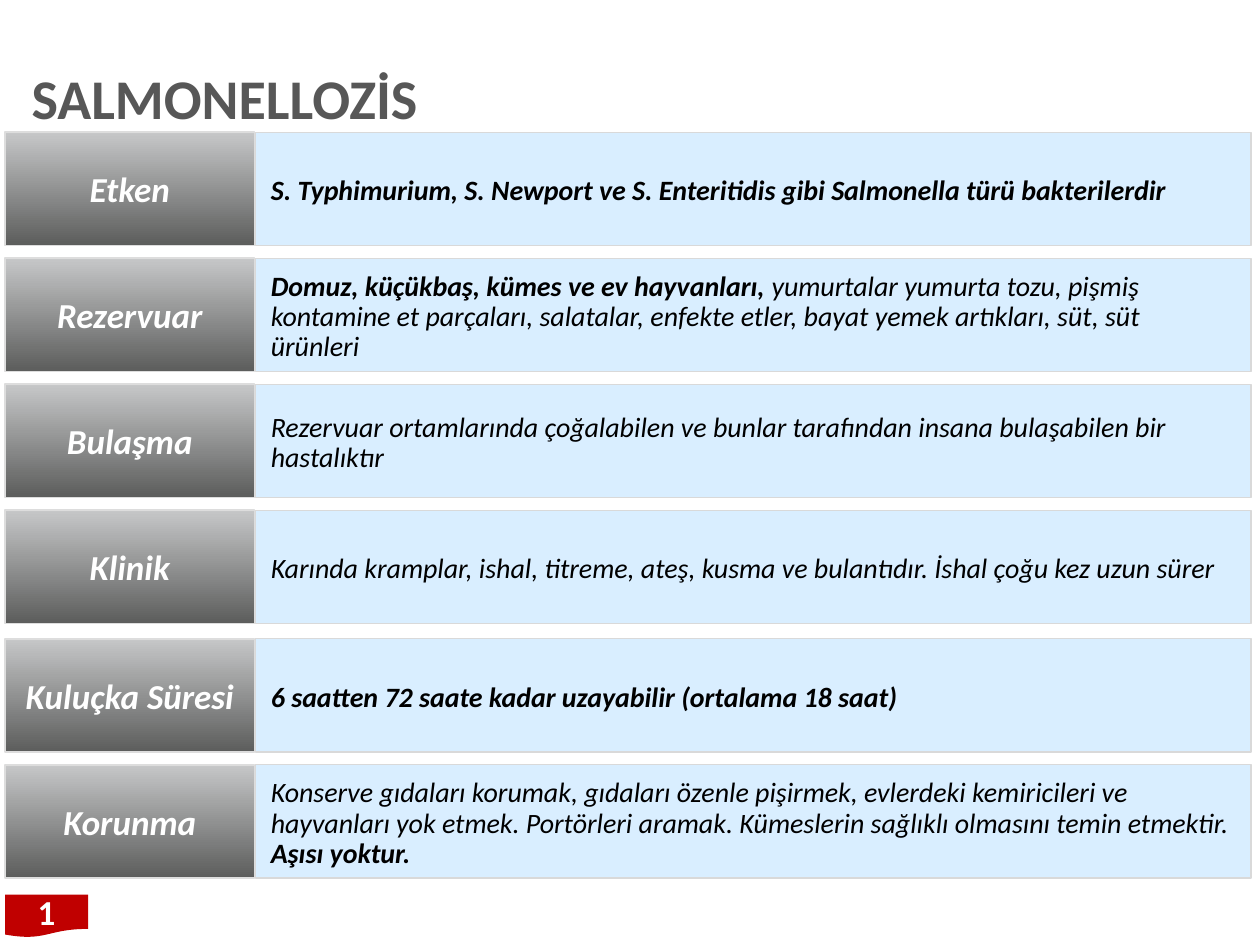
from dataclasses import dataclass

from lxml import etree
from pptx import Presentation
from pptx import util as u
from pptx.dml.color import RGBColor
from pptx.enum import shapes, text
from pptx.oxml.ns import qn


@dataclass(frozen=True)
class Theme:
    font: str = "Calibri"
    grey: str = "575757"
    white: str = "FFFFFF"
    black: str = "000000"
    red: str = "C00000"
    label_top: str = "C6C7C8"
    label_bottom: str = "5C5D5C"
    label_line: str = "DDDDDD"
    value_fill: str = "BDE1FF"
    value_line: str = "D9D9D9"
    title_size: float = 32
    label_size: float = 20
    value_size: float = 16


@dataclass(frozen=True)
class Run:
    text: str
    bold: bool = False


@dataclass(frozen=True)
class Row:
    label: str
    top: float
    runs: tuple[Run, ...]


@dataclass(frozen=True)
class Box:
    left: float
    top: float
    width: float
    height: float

    def points(self) -> tuple:
        return tuple(u.Pt(v) for v in (self.left, self.top, self.width, self.height))


THEME = Theme()
LABEL_LEFT, LABEL_WIDTH = 2.88, 142.56
VALUE_LEFT, VALUE_WIDTH = 146.16, 568.8
ROW_TOP, ROW_STEP, ROW_HEIGHT = 75.6, 72, 64.8
LOWER_TOP = ROW_TOP + 4 * ROW_STEP + 1.44

ROWS = (
    Row("Etken", ROW_TOP, (
        Run("S. Typhimurium, S. Newport ve S. Enteritidis gibi Salmonella türü "
            "bakterilerdir", True),)),
    Row("Rezervuar", ROW_TOP + ROW_STEP, (
        Run("Domuz, küçükbaş, kümes ve ev hayvanları, ", True),
        Run("yumurtalar yumurta tozu, pişmiş kontamine et parçaları, salatalar, "
            "enfekte etler, bayat yemek artıkları, süt, süt ürünleri"))),
    Row("Bulaşma", ROW_TOP + 2 * ROW_STEP, (
        Run("Rezervuar ortamlarında çoğalabilen ve bunlar tarafından insana "
            "bulaşabilen bir hastalıktır"),)),
    Row("Klinik", ROW_TOP + 3 * ROW_STEP, (
        Run("Karında kramplar, ishal, titreme, ateş, kusma ve bulantıdır. "
            "İshal çoğu kez uzun sürer"),)),
    Row("Kuluçka Süresi", LOWER_TOP, (
        Run("6 saatten 72 saate kadar uzayabilir (ortalama 18 saat)", True),)),
    Row("Korunma", LOWER_TOP + ROW_STEP, (
        Run("Konserve gıdaları korumak, gıdaları özenle pişirmek, evlerdeki "
            "kemiricileri ve hayvanları yok etmek. Portörleri aramak. Kümeslerin "
            "sağlıklı olmasını temin etmektir. "),
        Run("Aşısı yoktur.", True))),
)


def rgb(color: str) -> RGBColor:
    return RGBColor.from_string(color)


def set_frame(tf, insets: tuple[float, ...]) -> None:
    """Insets are left, top, right and bottom, in points."""
    sides = ("margin_left", "margin_top", "margin_right", "margin_bottom")
    values = dict(zip(sides, map(u.Pt, insets)))
    values |= {"word_wrap": True, "auto_size": text.MSO_AUTO_SIZE.NONE,
               "vertical_anchor": text.MSO_ANCHOR.MIDDLE}
    for name, value in values.items():
        setattr(tf, name, value)


def add_run(p, words: str, size: float, color: str,
            bold: bool = True, italic: bool = False) -> None:
    r = p.add_run()
    r.text = words
    values = {"name": THEME.font, "size": u.Pt(size), "bold": bold, "italic": italic}
    for name, value in values.items():
        setattr(r.font, name, value)
    r.font.color.rgb = rgb(color)


def add_panel(s, kind, box: Box):
    sp = s.shapes.add_shape(kind, *box.points())
    sp.shadow.inherit = False
    return sp


def set_line(sp, color: str, width: float) -> None:
    sp.line.color.rgb = rgb(color)
    sp.line.width = u.Pt(width)


def add_label(s, row: Row) -> None:
    sp = add_panel(s, shapes.MSO_SHAPE.RECTANGLE,
                   Box(LABEL_LEFT, row.top, LABEL_WIDTH, ROW_HEIGHT))
    sp.fill.gradient()
    sp.fill.gradient_angle = 270
    for stop, color in zip(sp.fill.gradient_stops, (THEME.label_top, THEME.label_bottom)):
        stop.color.rgb = rgb(color)
    set_line(sp, THEME.label_line, 1)
    set_frame(sp.text_frame, (0, 0, 0, 0))
    p = sp.text_frame.paragraphs[0]
    p.alignment = text.PP_ALIGN.CENTER
    add_run(p, row.label, THEME.label_size, THEME.white, italic=True)


def add_value(s, row: Row) -> None:
    sp = add_panel(s, shapes.MSO_SHAPE.RECTANGLE,
                   Box(VALUE_LEFT, row.top, VALUE_WIDTH, ROW_HEIGHT))
    sp.fill.solid()
    sp.fill.fore_color.rgb = rgb(THEME.value_fill)
    color = sp.element.spPr.find(qn("a:solidFill"))[0]
    etree.SubElement(color, qn("a:alpha")).set("val", "56000")
    set_line(sp, THEME.value_line, 0.75)
    set_frame(sp.text_frame, (8.64, 8.64, 11.52, 5.76))
    p = sp.text_frame.paragraphs[0]
    p.alignment = text.PP_ALIGN.LEFT
    p.line_spacing = 0.9
    for run in row.runs:
        add_run(p, run.text, THEME.value_size, THEME.black, run.bold, italic=True)


def add_title(s, words: str) -> None:
    title = s.shapes.title
    title.left, title.top, title.width, title.height = Box(18, 32.4, 694.08, 51.12).points()
    set_frame(title.text_frame, (0, 3.6, 0, 3.6))
    p = title.text_frame.paragraphs[0]
    p.alignment = text.PP_ALIGN.LEFT
    p.line_spacing = 0.9
    add_run(p, words, THEME.title_size, THEME.grey)


def add_page_number(s, number: str) -> None:
    sp = add_panel(s, shapes.MSO_SHAPE.FLOWCHART_DOCUMENT,
                   Box(LABEL_LEFT, 511.2, 47.52, 24.48))
    sp.fill.solid()
    sp.fill.fore_color.rgb = rgb(THEME.red)
    sp.line.fill.background()
    set_frame(sp.text_frame, (7.2, 3.6, 7.2, 3.6))
    p = sp.text_frame.paragraphs[0]
    p.alignment = text.PP_ALIGN.CENTER
    add_run(p, number, THEME.label_size, THEME.white)


def main() -> None:
    prs = Presentation()
    prs.slide_width, prs.slide_height = u.Pt(720), u.Pt(540)
    s = prs.slides.add_slide(prs.slide_layouts.get_by_name("Title Only"))
    add_title(s, "SALMONELLOZİS")
    for row in ROWS:
        add_label(s, row)
        add_value(s, row)
    add_page_number(s, "1")
    prs.save("out.pptx")


if __name__ == "__main__":
    main()
